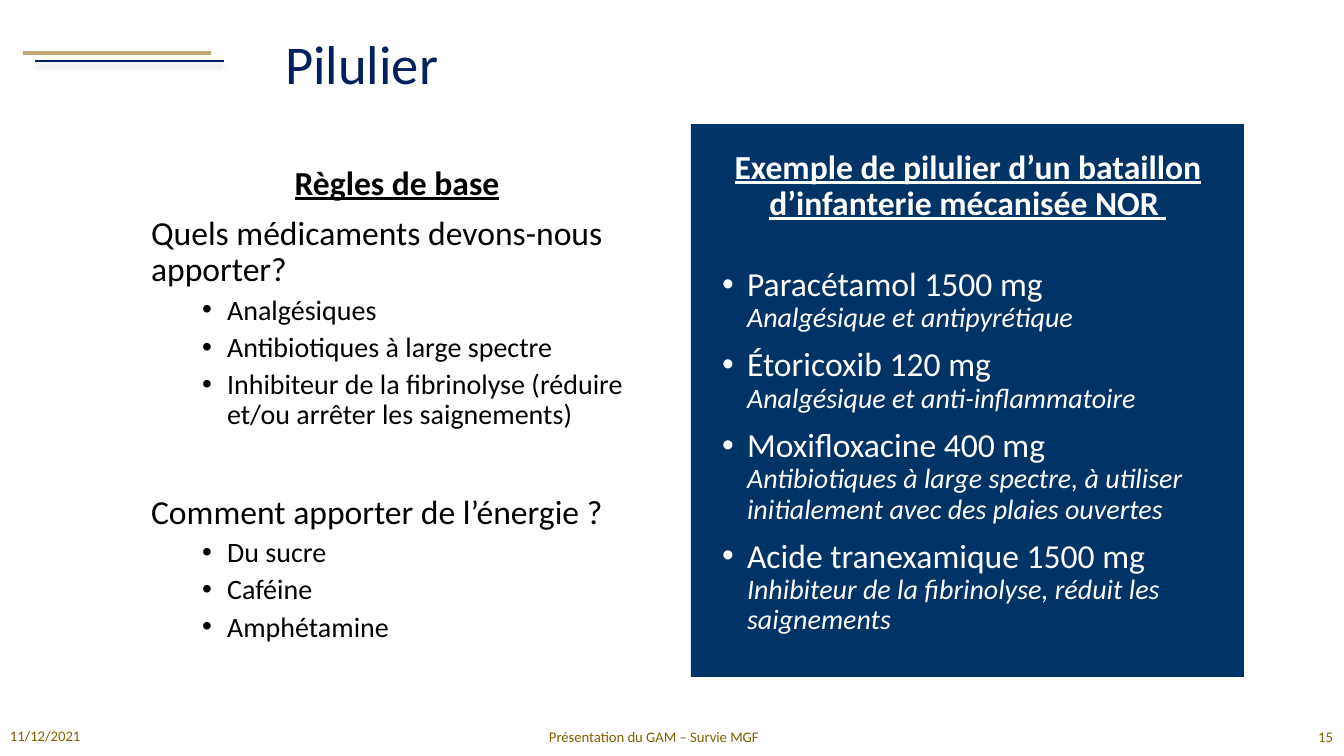
import copy
import lxml.etree
import pptx
import pptx.dml.color
import pptx.enum.shapes
import pptx.enum.text
import pptx.oxml.ns
import pptx.util

# Content: (kind, text, detail)
TITLE = "Pilulier"
RULES = [
    ("heading", "Règles de base", ""),
    ("question", "Quels médicaments devons-nous apporter?", ""),
    ("answer", "Analgésiques", ""),
    ("answer", "Antibiotiques à large spectre", ""),
    ("answer", "Inhibiteur de la fibrinolyse (réduire et/ou arrêter les saignements)", ""),
    ("next question", "Comment apporter de l’énergie ?", ""),
    ("answer", "Du sucre", ""),
    ("answer", "Caféine", ""),
    ("answer", "Amphétamine", ""),
]
PILLS = [
    ("heading", "Exemple de pilulier d’un bataillon d’infanterie mécanisée NOR ", ""),
    ("first pill", "Paracétamol 1500 mg ", "Analgésique et antipyrétique"),
    ("pill", "Étoricoxib 120 mg ", "Analgésique et anti-inflammatoire"),
    ("pill", "Moxifloxacine 400 mg ",
     "Antibiotiques à large spectre, à utiliser initialement avec des plaies ouvertes"),
    ("pill", "Acide tranexamique 1500 mg ",
     "Inhibiteur de la fibrinolyse, réduit les saignements"),
]
FOOTERS = [
    ("11/12/2021", "LEFT", (0, 716, 302, 40)),
    ("Présentation du GAM – Survie MGF", "CENTER", (427, 717, 454, 40)),
    ("15", "RIGHT", (1041, 717, 302, 40)),
]
COLORS = {"navy": "002060", "panel": "003366", "gold": "BFA973", "footer": "806000",
          "black": "000000", "white": "FFFFFF", "shadow": "D9D9D9"}
STYLES = {
    "heading": dict(size=24, bold=True, underline=True, align="CENTER", before=10),
    "question": dict(size=24, before=10),
    "next question": dict(size=24, before=46),
    "answer": dict(size=20, before=5, level=1, margin=76, bullet=True),
    "first pill": dict(size=24, before=32, margin=25, bullet=True),
    "pill": dict(size=24, before=10, margin=25, bullet=True),
}
HANG = 25
DETAIL_SIZE = 20
SCALE = 914400 / 100.8


def px(length):
    return pptx.util.Emu(round(length * SCALE))


def rgb(name):
    return pptx.dml.color.RGBColor.from_string(COLORS[name])


def add_element(parent, tag, **attributes):
    return lxml.etree.SubElement(parent, pptx.oxml.ns.qn(tag),
                                 {key: str(value) for key, value in attributes.items()})


def place(shape, area):
    shape.left, shape.top, shape.width, shape.height = map(px, area)


def add_span(para, text, size, color, bold=False, italic=False, underline=False):
    span = para.add_run()
    span.text = text
    font = span.font
    font.name, font.size = "Calibri", pptx.util.Pt(size)
    font.bold, font.italic, font.underline = bold, italic, underline
    font.color.rgb = rgb(color)
    return span


def write(para, text, detail="", size=24, color="black", bold=False, underline=False,
          align="LEFT", before=0, spacing=0.9, level=0, margin=0, bullet=False):
    para.alignment = getattr(pptx.enum.text.PP_ALIGN, align)
    para.level = level
    para.line_spacing = spacing
    para.space_before = pptx.util.Pt(before)
    para.space_after = pptx.util.Pt(0)
    properties = para._p.get_or_add_pPr()
    properties.set("marL", str(px(margin)))
    properties.set("indent", str(px(-HANG if bullet else 0)))
    if bullet:
        add_element(properties, "a:buFont", typeface="Arial")
        add_element(properties, "a:buChar", char="•")
    else:
        add_element(properties, "a:buNone")
    span = add_span(para, text, size, color, bold=bold, underline=underline)
    if detail:
        para.add_line_break()
        para._p[-1].append(copy.deepcopy(span._r.rPr))
        add_span(para, detail, DETAIL_SIZE, color, italic=True)


def prepare(box, area, anchor):
    place(box, area)
    frame = box.text_frame
    frame.word_wrap = True
    frame.auto_size = pptx.enum.text.MSO_AUTO_SIZE.NONE
    frame.vertical_anchor = getattr(pptx.enum.text.MSO_ANCHOR, anchor)
    return frame


def fill_column(box, area, entries, color):
    frame = prepare(box, area, "TOP")
    for index, (kind, text, detail) in enumerate(entries):
        para = frame.add_paragraph() if index else frame.paragraphs[0]
        style = STYLES[kind] if index else {**STYLES[kind], "before": 0}
        write(para, text, detail, color=color, **style)


def add_rule(left, top, length, color, width):
    rule = page.shapes.add_connector(pptx.enum.shapes.MSO_CONNECTOR.STRAIGHT,
                                     px(left), px(top), px(left + length), px(top))
    rule.line.color.rgb = rgb(color)
    rule.line.width = pptx.util.Pt(width)
    return add_element(rule._element.spPr, "a:effectLst")


deck = pptx.Presentation()
deck.slide_width, deck.slide_height = px(1344), px(756)
page = deck.slides.add_slide(deck.slide_layouts[3])
title, rules_box, pills_box = page.placeholders

# Blue panel, behind the text
panel = page.shapes.add_shape(pptx.enum.shapes.MSO_SHAPE.RECTANGLE, 0, 0, 0, 0)
place(panel, (691, 124, 553, 553))
panel.shadow.inherit = False
panel.fill.solid()
panel.fill.fore_color.rgb = rgb("panel")
panel.line.fill.background()
page.shapes._spTree.insert(2, panel._element)

# Double rule beside the title
effects = add_rule(35, 61, 189, "navy", 1.75)
blur = pptx.util.Pt(4)
shadow = add_element(effects, "a:outerShdw", blurRad=blur, dist=blur, dir=90 * 60000,
                     algn="t", rotWithShape=0)
add_element(shadow, "a:srgbClr", val=COLORS["shadow"])
add_rule(23, 53, 188, "gold", 2.5)

# Title and the two columns
write(prepare(title, (275, 21, 949, 92), "MIDDLE").paragraphs[0], TITLE,
      size=39, color="navy")
fill_column(rules_box, (141, 161, 512, 516), RULES, "black")
fill_column(pills_box, (712, 145, 512, 516), PILLS, "white")

# Footer line
for text, align, area in FOOTERS:
    box = page.shapes.add_textbox(0, 0, 0, 0)
    write(prepare(box, area, "MIDDLE").paragraphs[0], text, size=10.5,
          color="footer", align=align, spacing=1.0)

deck.save("out.pptx")
